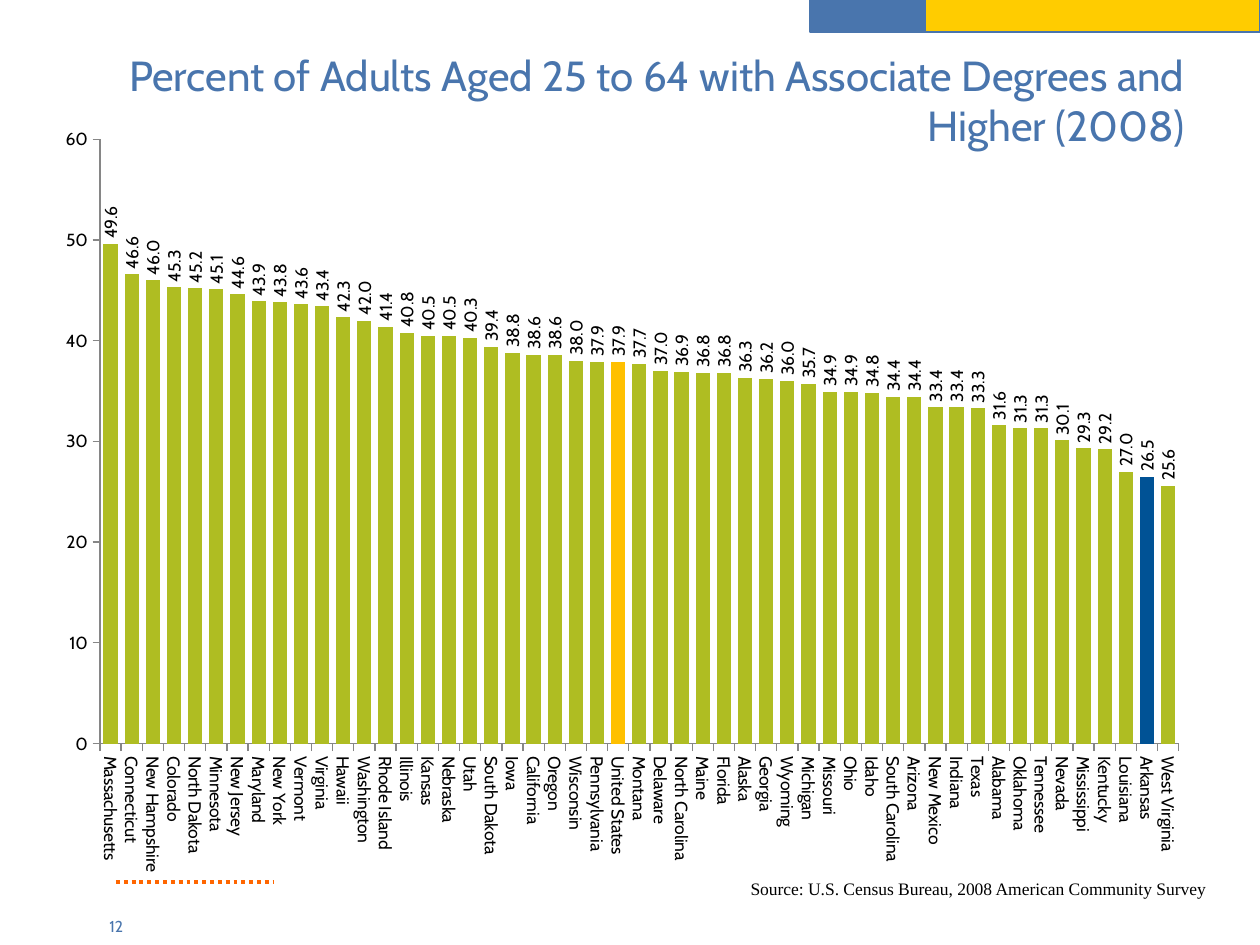
from lxml import etree
from pptx import Presentation
from pptx.chart.data import CategoryChartData
from pptx.dml.color import RGBColor
from pptx.enum.chart import XL_CHART_TYPE as ChartType, XL_LABEL_POSITION as LabelPosition, XL_TICK_MARK as TickMark
from pptx.enum.dml import MSO_LINE_DASH_STYLE as Dash
from pptx.enum.shapes import MSO_CONNECTOR_TYPE as Connector, MSO_SHAPE as Shape
from pptx.enum.text import MSO_ANCHOR as Anchor, PP_ALIGN as Align
from pptx.oxml import parse_xml
from pptx.oxml.ns import nsdecls, qn
from pptx.util import Emu, Pt

PX_PER_INCH = 126
FONT = "Cabin"
BLUE, YELLOW, ORANGE = "4975AD", "FFCC00", "FF6600"
GREEN, GOLD, NAVY = "AFBD22", "FFC000", "005295"
BLACK, WHITE, GRAY = "000000", "FFFFFF", "868686"
HIGHLIGHTS = {"United States": GOLD, "Arkansas": NAVY}
DEGREES = {
    "Massachusetts": 49.6, "Connecticut": 46.6, "New Hampshire": 46.0,
    "Colorado": 45.3, "North Dakota": 45.2, "Minnesota": 45.1,
    "New Jersey": 44.6, "Maryland": 43.9, "New York": 43.8,
    "Vermont": 43.6, "Virginia": 43.4, "Hawaii": 42.3,
    "Washington": 42.0, "Rhode Island": 41.4, "Illinois": 40.8,
    "Kansas": 40.5, "Nebraska": 40.5, "Utah": 40.3,
    "South Dakota": 39.4, "Iowa": 38.8, "California": 38.6,
    "Oregon": 38.6, "Wisconsin": 38.0, "Pennsylvania": 37.9,
    "United States": 37.9, "Montana": 37.7, "Delaware": 37.0,
    "North Carolina": 36.9, "Maine": 36.8, "Florida": 36.8,
    "Alaska": 36.3, "Georgia": 36.2, "Wyoming": 36.0,
    "Michigan": 35.7, "Missouri": 34.9, "Ohio": 34.9,
    "Idaho": 34.8, "South Carolina": 34.4, "Arizona": 34.4,
    "New Mexico": 33.4, "Indiana": 33.4, "Texas": 33.3,
    "Alabama": 31.6, "Oklahoma": 31.3, "Tennessee": 31.3,
    "Nevada": 30.1, "Mississippi": 29.3, "Kentucky": 29.2,
    "Louisiana": 27.0, "Arkansas": 26.5, "West Virginia": 25.6,
}


def px(length):
    return Emu(round(length * 914400 / PX_PER_INCH))


def color(value):
    return RGBColor.from_string(value)


def style_font(font, size, value, name=FONT):
    font.size = Pt(size)
    font.name = name
    font.color.rgb = color(value)


def style_line(line, value, width=0.75):
    line.color.rgb = color(value)
    line.width = Pt(width)


def add_text(shape, text, size, value, name=FONT, align=Align.LEFT):
    shape.text_frame.word_wrap = True
    paragraph = shape.text_frame.paragraphs[0]
    paragraph.alignment = align
    run = paragraph.add_run()
    run.text = text
    style_font(run.font, size, value, name)


def add_text_box(slide, box, *text_style):
    shape = slide.shapes.add_textbox(*map(px, box))
    add_text(shape, *text_style)


def add_top_band(slide, box):
    left, top, width, height = box
    blue_width = 115
    parts = [(left, blue_width, BLUE), (left + blue_width, width - blue_width, YELLOW)]
    for part_left, part_width, fill in parts:
        shape = slide.shapes.add_shape(Shape.RECTANGLE, *map(px, (part_left, top, part_width, height)))
        shape.shadow.inherit = False
        shape.fill.solid()
        shape.fill.fore_color.rgb = color(fill)
        style_line(shape.line, BLUE)


def add_dotted_rule(slide, left, top, width):
    rule = slide.shapes.add_connector(Connector.STRAIGHT, px(left), px(top), px(left + width), px(top))
    style_line(rule.line, ORANGE, 2.25)
    rule.line.dash_style = Dash.ROUND_DOT
    etree.SubElement(rule._element.spPr, qn("a:effectLst"))


def place_title(slide, box):
    title = slide.shapes.title
    title.left, title.top, title.width, title.height = map(px, box)
    title.text_frame.vertical_anchor = Anchor.MIDDLE
    add_text(title, "Percent of Adults Aged 25 to 64 with Associate Degrees and Higher (2008)",
             24, BLUE, FONT, Align.RIGHT)
    slide.shapes._spTree.append(title._element)


def rotate_text(element, degrees):
    body = element.find(qn("c:txPr")).find(qn("a:bodyPr"))
    body.set("rot", str(degrees * 60000))
    body.set("vert", "horz")


def set_plot_box(chart, **fractions):
    plot_area = chart._chartSpace.chart.plotArea
    for old_layout in plot_area.findall(qn("c:layout")):
        plot_area.remove(old_layout)
    values = "".join(f'<c:{key} val="{value}"/>' for key, value in fractions.items())
    plot_area.insert(0, parse_xml(
        f'<c:layout {nsdecls("c")}><c:manualLayout><c:layoutTarget val="inner"/>'
        f'<c:xMode val="edge"/><c:yMode val="edge"/>{values}</c:manualLayout></c:layout>'))


def style_axes(chart):
    for axis in (chart.category_axis, chart.value_axis):
        axis.major_tick_mark = TickMark.OUTSIDE
        axis.minor_tick_mark = TickMark.NONE
        style_line(axis.format.line, GRAY)
        style_font(axis.tick_labels.font, 10, BLACK)
    rotate_text(chart.category_axis._element, 90)
    value_axis = chart.value_axis
    value_axis.minimum_scale, value_axis.maximum_scale, value_axis.major_unit = 0, 60, 10
    value_axis.tick_labels.number_format = "0"
    value_axis.tick_labels.number_format_is_linked = False
    value_axis.has_major_gridlines = True
    style_line(value_axis.major_gridlines.format.line, WHITE)


def style_columns(plot):
    plot.gap_width = 49
    plot.vary_by_categories = False
    series = plot.series[0]
    series.invert_if_negative = False
    series.format.fill.solid()
    series.format.fill.fore_color.rgb = color(GREEN)
    for index, state in enumerate(DEGREES):
        if state in HIGHLIGHTS:
            fill = series.points[index].format.fill
            fill.solid()
            fill.fore_color.rgb = color(HIGHLIGHTS[state])
    labels = series.data_labels
    labels.show_value = True
    labels.number_format = "0.0"
    labels.number_format_is_linked = False
    labels.position = LabelPosition.OUTSIDE_END
    style_font(labels.font, 10, BLACK)
    rotate_text(labels._element, -90)


def add_degree_chart(slide, box):
    data = CategoryChartData(number_format="0.0")
    data.categories = list(DEGREES)
    data.add_series("Series 1", list(DEGREES.values()))
    chart = slide.shapes.add_chart(ChartType.COLUMN_CLUSTERED, *map(px, box), data).chart
    chart.has_title = False
    chart.has_legend = False
    style_font(chart.font, 10, BLACK)
    style_axes(chart)
    style_columns(chart.plots[0])
    set_plot_box(chart, x=0.05, y=0.03, w=0.93, h=0.78)


def main():
    presentation = Presentation()
    presentation.slide_width, presentation.slide_height = px(1260), px(945)
    slide = presentation.slides.add_slide(presentation.slide_layouts[5])
    add_dotted_rule(slide, 116, 882, 157)
    add_top_band(slide, (810, -1, 450, 33))
    add_text_box(slide, (315, 872, 903, 34), "Source: U.S. Census Bureau, 2008 American Community Survey",
                 10, BLACK, "Times New Roman", Align.RIGHT)
    add_degree_chart(slide, (42, 116, 1160, 775))
    place_title(slide, (63, 34, 1134, 132))
    add_text_box(slide, (97, 911, 126, 34), "12", 9, BLUE)
    presentation.save("out.pptx")


if __name__ == "__main__":
    main()
